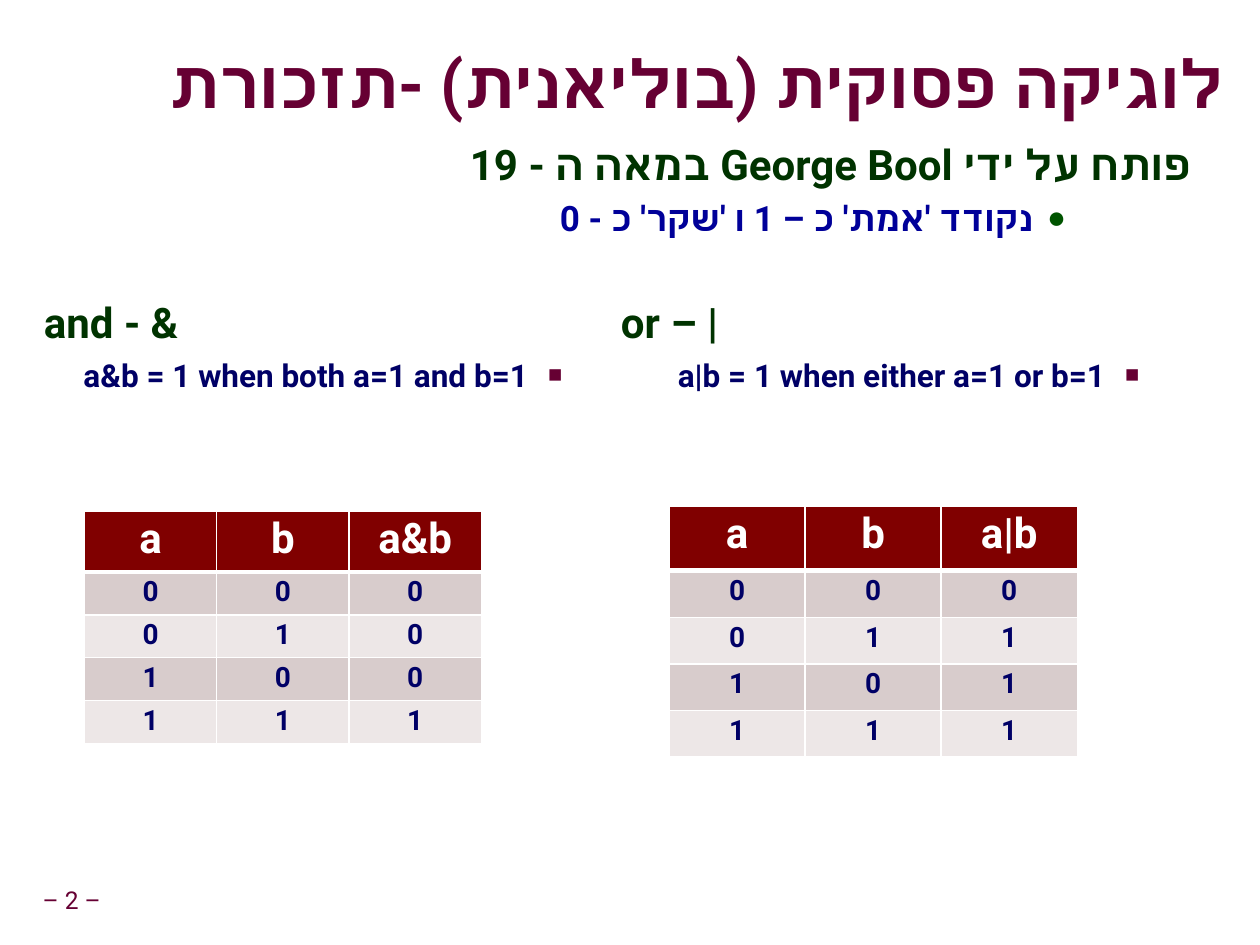
"""Build a Hebrew slide recalling Boolean logic, with truth tables for and / or."""
from lxml.etree import SubElement
from pptx import Presentation
from pptx.dml.color import RGBColor
from pptx.enum.text import MSO_ANCHOR, PP_ALIGN
from pptx.oxml.ns import qn
from pptx.util import Inches, Pt

FONT = "Roboto"
MAROON = RGBColor(0x66, 0x00, 0x33)
GREEN = RGBColor(0x00, 0x33, 0x00)
BULLET_GREEN = RGBColor(0x00, 0x54, 0x00)
BLUE = RGBColor(0x00, 0x00, 0x99)
NAVY = RGBColor(0x00, 0x00, 0x66)
SHADOW = RGBColor(0x96, 0x96, 0x96)
HEADER = RGBColor(0x80, 0x00, 0x00)
BANDS = [RGBColor(0xED, 0xE7, 0xE7), RGBColor(0xD8, 0xCC, 0xCC)]
WHITE = RGBColor(0xFF, 0xFF, 0xFF)


def write(p, text, size, color, bold=True, align=PP_ALIGN.LEFT, spacing=0.9,
          before=0, rtl=False, indent=None, bullet=None):
    r = p.add_run()
    r.text = text
    formats = {"name": FONT, "size": Pt(size), "bold": bold}
    for name, value in formats.items():
        setattr(r.font, name, value)
    r.font.color.rgb = color
    SubElement(r.font._element, qn("a:cs"), typeface=FONT)
    p.alignment = align
    p.line_spacing = spacing
    if before:
        p.space_before = Pt(before)
    pPr = p._p.get_or_add_pPr()
    if rtl:
        pPr.set("rtl", "1")
    if indent:
        pPr.set("marL", str(Inches(indent[0])))
        pPr.set("indent", str(Inches(indent[1])))
    if bullet:
        char, bullet_color, percent = bullet
        clr = SubElement(pPr, qn("a:buClr"))
        SubElement(clr, qn("a:srgbClr"), val=str(bullet_color))
        SubElement(pPr, qn("a:buSzPct"), val=str(percent * 1000))
        SubElement(pPr, qn("a:buFont"), typeface="Arial")
        SubElement(pPr, qn("a:buChar"), char=char)
    return r


def add_box(s, box, margins=(0.1, 0.05), anchor=MSO_ANCHOR.TOP, wrap=True):
    tf = s.shapes.add_textbox(*[Inches(v) for v in box]).text_frame
    x, y = [Inches(v) for v in margins]
    formats = {"word_wrap": wrap, "vertical_anchor": anchor, "margin_left": x,
               "margin_right": x, "margin_top": y, "margin_bottom": y}
    for name, value in formats.items():
        setattr(tf, name, value)
    return tf


prs = Presentation()
prs.slide_width, prs.slide_height = Inches(10), Inches(7.5)
s = prs.slides.add_slide(prs.slide_layouts[6])
RTL = {"align": PP_ALIGN.RIGHT, "rtl": True}
HANGING = {"spacing": 0.95, "indent": (0.42, -0.42)}

tf = add_box(s, (0.24, 7, 0.66, 0.31), (0.05, 0.05), MSO_ANCHOR.MIDDLE, False)
write(tf.paragraphs[0], "– 2 –", 14, MAROON, bold=False, align=PP_ALIGN.CENTER)

tf = add_box(s, (0.44, 0.27, 9.28, 0.85), (0, 0), MSO_ANCHOR.MIDDLE)
r = write(tf.paragraphs[0], "לוגיקה פסוקית (בוליאנית) -תזכורת", 38, MAROON, spacing=0.87, **RTL)
effects = SubElement(r.font._element, qn("a:effectLst"))
r.font._element.find(qn("a:latin")).addprevious(effects)
shadow = SubElement(effects, qn("a:outerShdw"), dist=str(Pt(3)), dir="2700000")
SubElement(shadow, qn("a:srgbClr"), val=str(SHADOW))

tf = add_box(s, (0.46, 1.08, 9.09, 5.71))
write(tf.paragraphs[0], "פותח על ידי George Bool במאה ה - 19", 24, GREEN, **RTL, **HANGING)
write(tf.add_paragraph(), "נקודד 'אמת' כ – 1 ו 'שקר' כ - 0", 20, BLUE, spacing=1.07, before=2,
      indent=(1.25, -0.26), bullet=("●", BULLET_GREEN, 90), **RTL)

operators = [
    (0.25, "and - &", "a&b = 1 when both a=1 and b=1"),
    (4.83, "or – |", "a|b = 1 when either a=1 or b=1"),
]
for left, title, rule in operators:
    tf = add_box(s, (left, 2.33, 4.85, 0.92))
    write(tf.paragraphs[0], title, 24, GREEN, **HANGING)
    write(tf.add_paragraph(), rule, 18, NAVY, spacing=1.0, before=4.5,
          indent=(0.81, -0.27), bullet=("■", MAROON, 75), **RTL)

inputs = [(a, b) for a in (0, 1) for b in (0, 1)]
tables = [
    ("a&b", [a & b for a, b in inputs], 0.67, 4.06, 1.05, 0.48, 0.32),
    ("a|b", [a | b for a, b in inputs], 5.31, 4.02, 1.08, 0.51, 0.37),
]
for name, results, left, top, col_w, head_h, row_h in tables:
    rows = [("a", "b", name)] + [(a, b, y) for (a, b), y in zip(inputs, results)]
    size = (left, top, 3 * col_w, head_h + 4 * row_h)
    table = s.shapes.add_table(5, 3, *[Inches(v) for v in size]).table
    for col in table.columns:
        col.width = Inches(col_w)
    for i, values in enumerate(rows):
        table.rows[i].height = Inches(row_h if i else head_h)
        for j, value in enumerate(values):
            cell = table.cell(i, j)
            widths = {"lnL": 1, "lnR": 1, "lnT": 3 if i == 1 else 1, "lnB": 1 if i else 3}
            tcPr = cell._tc.get_or_add_tcPr()
            for side, width in widths.items():
                ln = SubElement(tcPr, qn(f"a:{side}"), w=str(Pt(width)))
                SubElement(SubElement(ln, qn("a:solidFill")), qn("a:srgbClr"), val=str(WHITE))
            cell.fill.solid()
            cell.fill.fore_color.rgb = BANDS[i % 2] if i else HEADER
            write(cell.text_frame.paragraphs[0], str(value), 16 if i else 24,
                  NAVY if i else WHITE, align=PP_ALIGN.CENTER)

prs.save("out.pptx")
